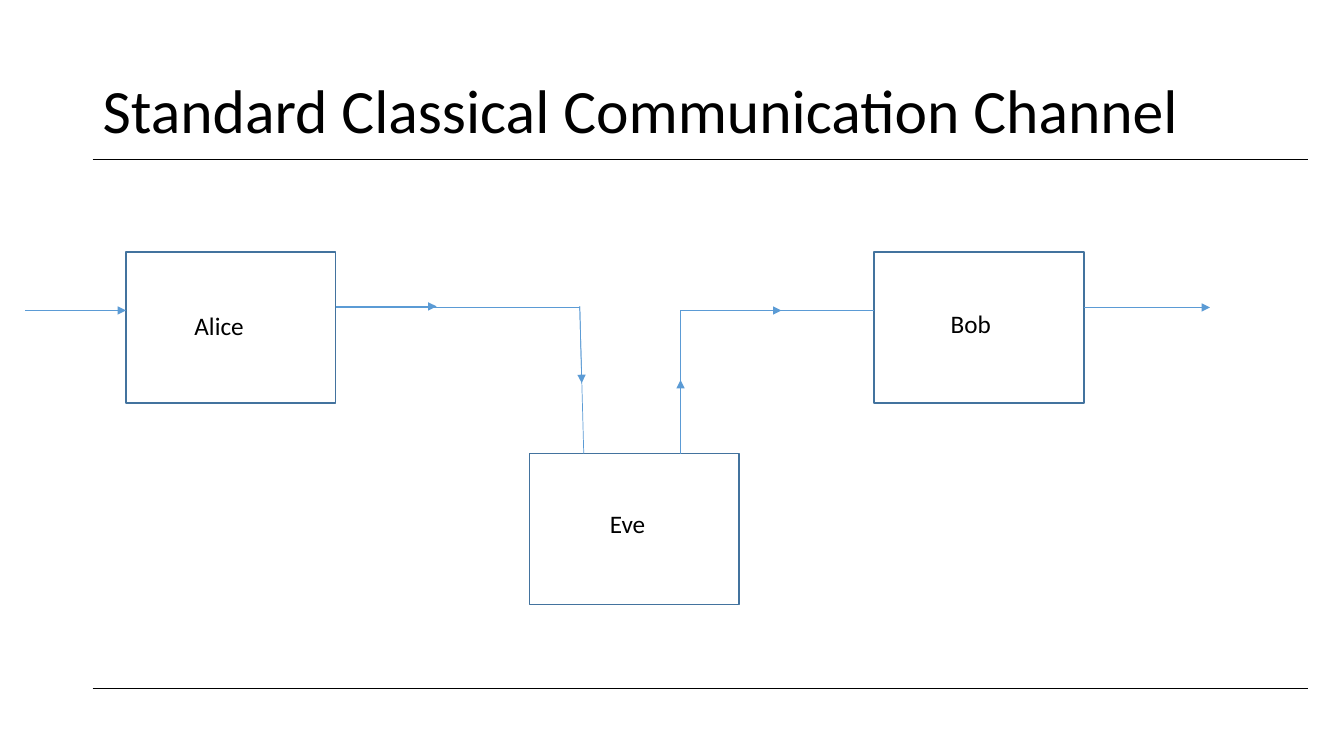
from lxml.etree import SubElement
from pptx import Presentation
from pptx.dml.color import RGBColor
from pptx.enum.shapes import MSO_CONNECTOR, MSO_SHAPE
from pptx.enum.text import MSO_ANCHOR
from pptx.oxml.ns import qn
from pptx.util import Inches, Pt

PARTY_SIZE = (2.08, 1.5)
LABEL_SIZE = (1.08, 0.42)
PARTIES = [
    ("Alice", (1.25, 2.5), (1.83, 3.03)),
    ("Bob", (8.67, 2.5), (9.33, 3.01)),
    ("Eve", (5.25, 4.5), (5.95, 4.99)),
]
WIRES = [
    ((3.33, 3.05), (5.75, 3.05)),
    ((5.75, 3.04), (5.79, 4.5)),
    ((6.75, 3.08), (6.75, 4.5)),
    ((7.75, 3.08), (8.67, 3.08)),
]
ARROWS = [
    ((0.25, 3.08), (1.25, 3.08)),
    ((3.33, 3.04), (4.33, 3.04)),
    ((5.75, 3.04), (5.77, 3.8)),
    ((6.75, 4.5), (6.75, 3.77)),
    ((6.75, 3.08), (7.75, 3.08)),
    ((10.75, 3.05), (12, 3.05)),
]
RULE_HEIGHTS = [1.58, 6.83]


def color(value):
    return RGBColor.from_string(value)


class ChannelSlide:
    font_name = "Calibri"
    ink = "000000"
    outline = "43739E"
    signal = "5B9BD5"

    def __init__(self, page):
        self.page = page

    def text(self, words, position, size, points, frame_format=None, para_format=None):
        box = self.page.shapes.add_textbox(*map(Inches, position + size))
        frame = box.text_frame
        para = frame.paragraphs[0]
        span = para.add_run()
        span.text = words
        span.font.color.rgb = color(self.ink)
        formats = [
            (frame, {"word_wrap": True, **(frame_format or {})}),
            (para, para_format or {}),
            (span.font, {"name": self.font_name, "size": Pt(points)}),
        ]
        for target, values in formats:
            for name, value in values.items():
                setattr(target, name, value)

    def party(self, position):
        box = self.page.shapes.add_shape(
            MSO_SHAPE.RECTANGLE, *map(Inches, position + PARTY_SIZE)
        )
        box.shadow.inherit = False
        box.fill.background()
        box.line.color.rgb = color(self.outline)
        box.line.width = Pt(1)

    def line(self, start, end, shade, points, arrow=False):
        connector = self.page.shapes.add_connector(
            MSO_CONNECTOR.STRAIGHT, *map(Inches, start + end)
        )
        connector.line.color.rgb = color(shade)
        connector.line.width = Pt(points)
        properties = connector._element.spPr
        if arrow:
            outline = properties.find(qn("a:ln"))
            SubElement(outline, qn("a:tailEnd"), type="triangle")
        SubElement(properties, qn("a:effectLst"))


def main():
    deck = Presentation()
    deck.slide_width = Inches(13.33)
    deck.slide_height = Inches(7.5)
    slide = ChannelSlide(deck.slides.add_slide(deck.slide_layouts[6]))

    slide.text(
        "Standard Classical Communication Channel",
        (0.92, 0.4),
        (11.5, 1.45),
        44,
        {"vertical_anchor": MSO_ANCHOR.MIDDLE},
        {"line_spacing": 0.9},
    )
    for name, corner, label_corner in PARTIES:
        slide.party(corner)
        slide.text(name, label_corner, LABEL_SIZE, 18)
    for start, end in WIRES:
        slide.line(start, end, slide.signal, 0.5)
    for start, end in ARROWS:
        slide.line(start, end, slide.signal, 0.5, arrow=True)
    for height in RULE_HEIGHTS:
        slide.line((0.92, height), (12.97, height), slide.ink, 0.75)

    deck.save("out.pptx")


if __name__ == "__main__":
    main()
